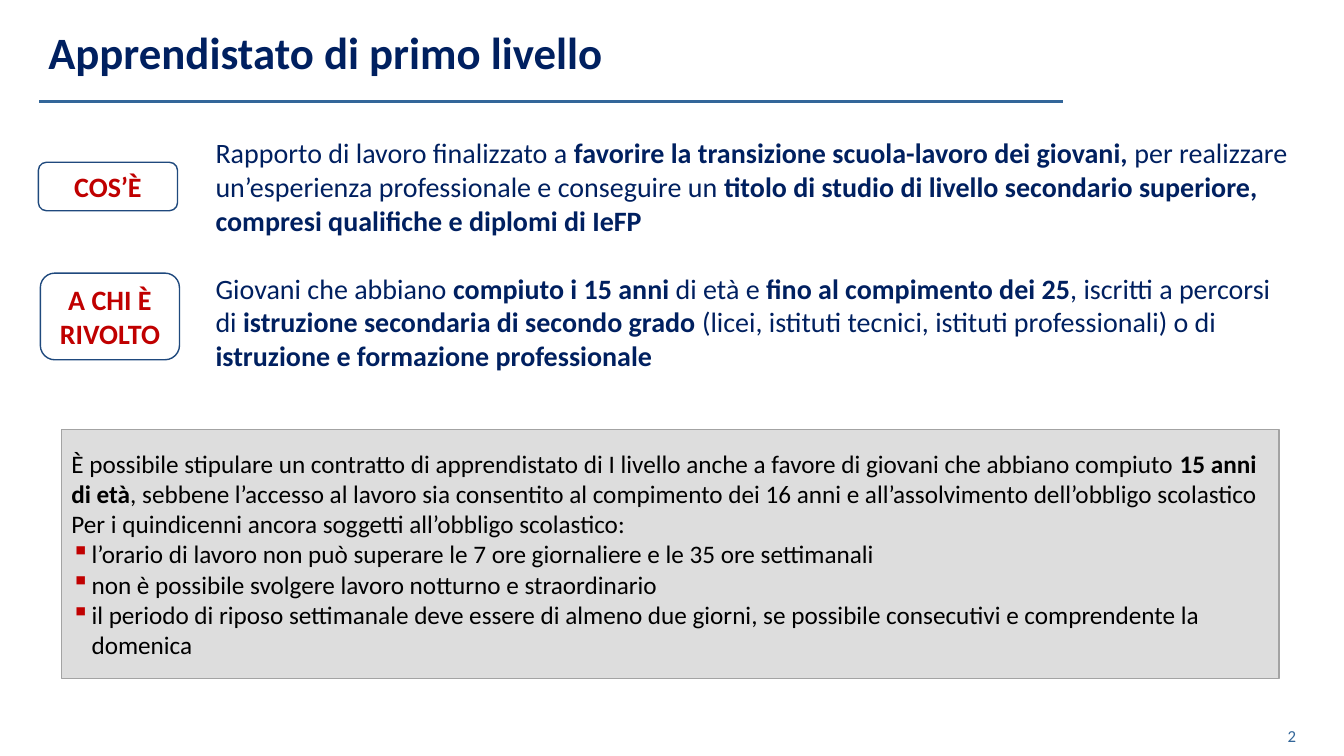
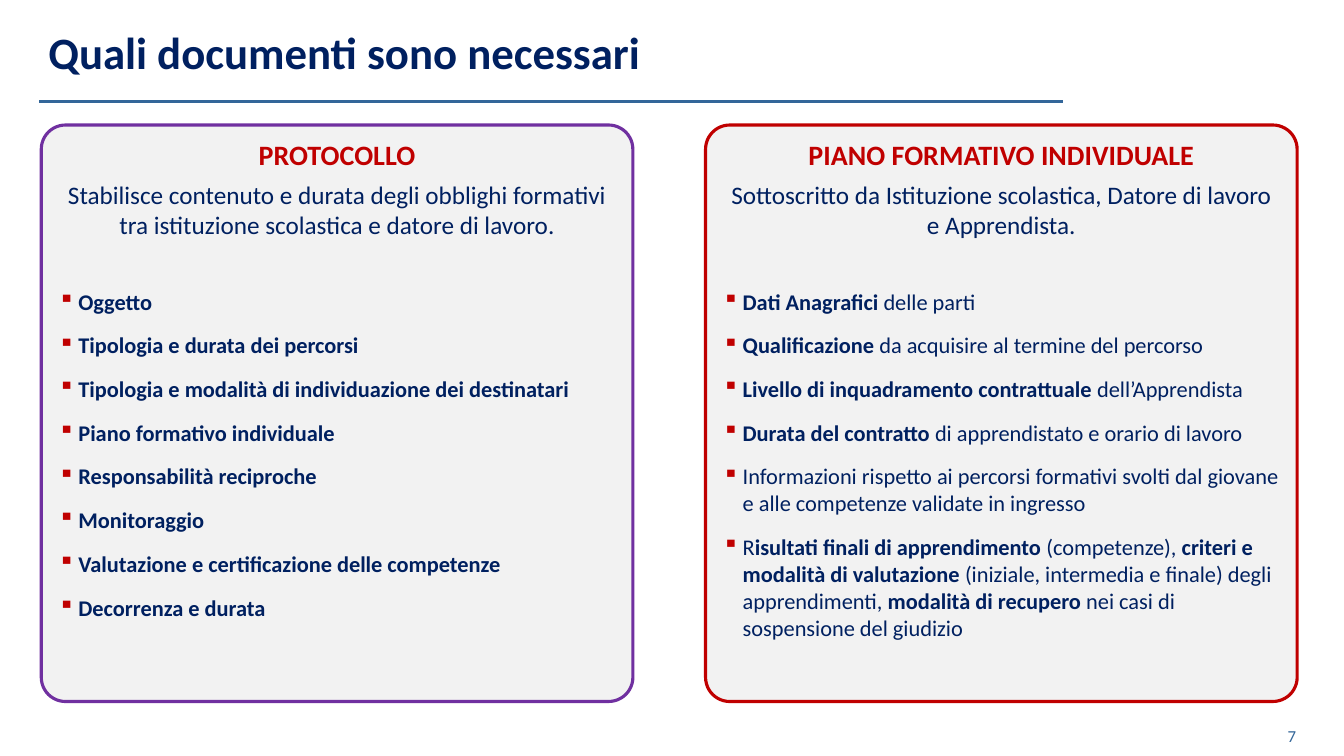
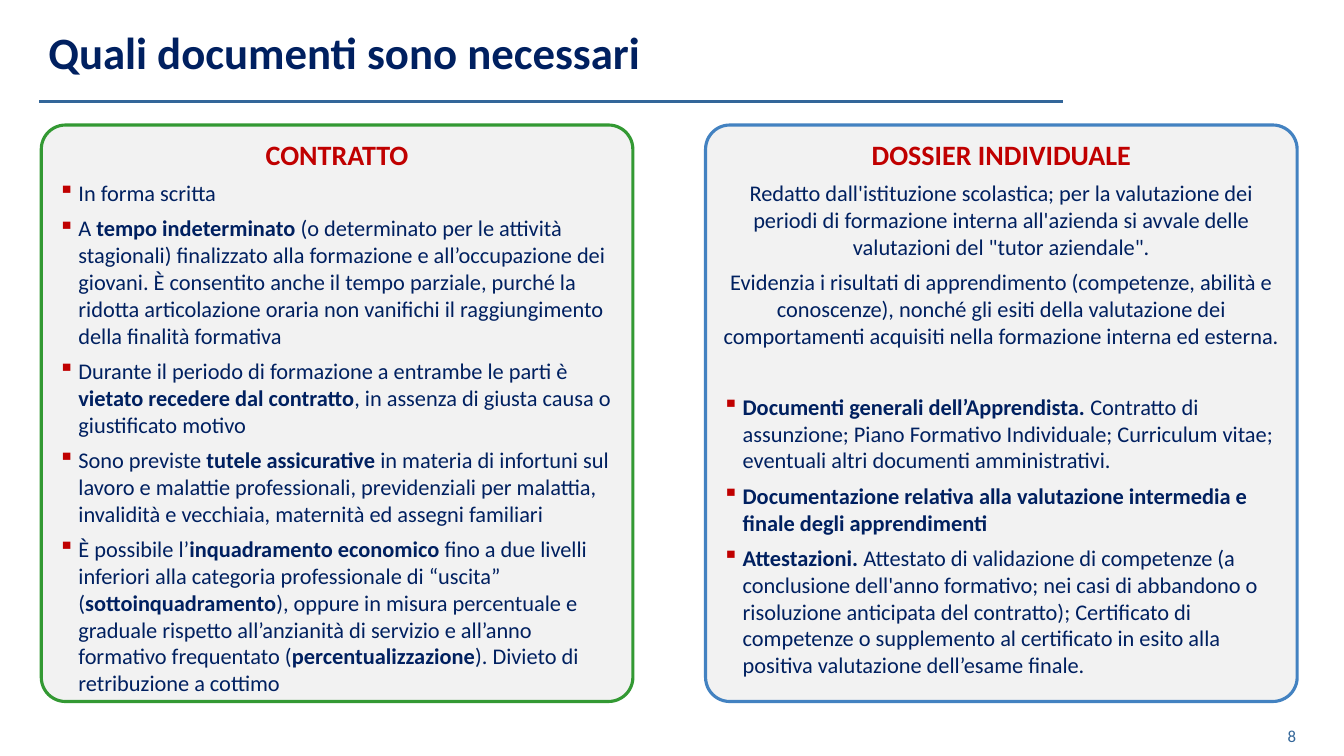
from lxml.etree import SubElement as Sub
from pptx import Presentation
from pptx.dml.color import RGBColor as Rgb
from pptx.enum.shapes import MSO_CONNECTOR as Conn, MSO_SHAPE as Shape
from pptx.enum.text import MSO_ANCHOR as Anchor, PP_ALIGN as Align
from pptx.oxml.ns import qn
from pptx.util import Pt

HUES = {
    "navy": "002060", "red": "C00000", "steel": "336699", "deep": "1F497D",
    "black": "000000", "white": "FFFFFF", "pale": "F2F2F2", "grey": "DDDDDD",
    "edge": "A3A3A3", "purple": "7030A0", "green": "339933", "blue": "4382C1",
}
FONT = "Calibri"
INDENT = 14.4
LEFT, RIGHT = 29.5, 504


def hue(name):
    return Rgb.from_string(HUES[name])


def write(frame, text, size=16, color="navy", bold=False, align=Align.LEFT,
          before=0, after=0, bullet=False):
    """Add a paragraph; ** switches bold on and off."""
    para = frame.paragraphs[0]
    if para.runs:
        para = frame.add_paragraph()
    para.alignment = align
    para.space_before, para.space_after = Pt(before), Pt(after)
    if bullet:
        props = para._p.get_or_add_pPr()
        props.set("marL", str(Pt(INDENT)))
        props.set("indent", str(-Pt(INDENT)))
        Sub(Sub(props, qn("a:buClr")), qn("a:srgbClr")).set("val", HUES["red"])
        Sub(props, qn("a:buChar")).set("char", "▪")
    for i, part in enumerate(text.split("**")):
        if part:
            run = para.add_run()
            run.text = part
            font = run.font
            font.name, font.size = FONT, Pt(size)
            font.bold = bold or i % 2 == 1
            font.color.rgb = hue(color)


class Deck:
    def __init__(self):
        self.prs = Presentation()
        self.prs.slide_width, self.prs.slide_height = Pt(960), Pt(540)

    def start(self, title, number):
        """Open a slide with its title, rule and page number."""
        blank = self.prs.slide_layouts[6]
        self.shapes = self.prs.slides.add_slide(blank).shapes
        self.rule(28, 72.7, 759)
        self.text(717, 511, 216, 29, str(number), anchor=Anchor.MIDDLE,
                  size=12, color="steel", align=Align.RIGHT)
        self.text(27.4, 3.6, 766, 66, title, anchor=Anchor.MIDDLE,
                  size=32, bold=True)

    def rule(self, x, y, end):
        line = self.shapes.add_connector(Conn.STRAIGHT, Pt(x), Pt(y), Pt(end), Pt(y))
        line.line.color.rgb = hue("steel")
        line.line.width = Pt(2.25)
        Sub(line._element.spPr, qn("a:effectLst"))

    def text(self, x, y, w, h, text, anchor=Anchor.TOP, **style):
        frame = self.shapes.add_textbox(Pt(x), Pt(y), Pt(w), Pt(h)).text_frame
        frame.word_wrap, frame.vertical_anchor = True, anchor
        write(frame, text, **style)

    def box(self, x, y, w, h, fill, edge, width=1, kind=Shape.ROUNDED_RECTANGLE,
            anchor=Anchor.MIDDLE, round=None):
        """Draw a filled box and return its text frame."""
        shape = self.shapes.add_shape(kind, Pt(x), Pt(y), Pt(w), Pt(h))
        shape.shadow.inherit = False
        shape.fill.solid()
        shape.fill.fore_color.rgb = hue(fill)
        shape.line.color.rgb = hue(edge)
        shape.line.width = Pt(width)
        if round is not None:
            shape.adjustments[0] = round
        frame = shape.text_frame
        frame.word_wrap, frame.vertical_anchor = True, anchor
        return frame

    def topic(self, x, y, h, label, top, text):
        """Place a label box with its text on the right."""
        frame = self.box(x, y, 99.4, h, "white", "deep")
        write(frame, label, size=20, color="red", bold=True, align=Align.CENTER)
        self.text(146.9, top, 781, 80, text, size=20)

    def panel(self, x, edge, title, intro, items, size=16, space=3, gap=0):
        """Draw a panel: title, centred intro, then bullets after a gap."""
        frame = self.box(x, 89.3, 422.6, 411.8, "pale", edge, width=2.25,
                         anchor=Anchor.TOP, round=0.042)
        write(frame, title, size=20, color="red", bold=True,
              align=Align.CENTER, after=3)
        for text in intro:
            write(frame, text, size=size, align=Align.CENTER, before=3, after=3)
        for i, text in enumerate(items):
            write(frame, text, before=space if i else space + gap,
                  after=space, bullet=True)


def main():
    deck = Deck()

    deck.start("Apprendistato di primo livello", 2)
    deck.topic(27.4, 115.9, 34.6, "COS’È", 93.6,
               "Rapporto di lavoro finalizzato a **favorire la transizione scuola-lavoro "
               "dei giovani, **per realizzare un’esperienza professionale e conseguire un "
               "**titolo di studio di livello secondario superiore, compresi qualifiche e "
               "diplomi di IeFP**")
    deck.topic(28.8, 195.1, 61.9, "A CHI È RIVOLTO", 190.1,
               "Giovani che abbiano **compiuto i 15 anni **di età e **fino al compimento "
               "dei 25**, iscritti a percorsi di **istruzione secondaria di secondo grado** "
               "(licei, istituti tecnici, istituti professionali) o di **istruzione e "
               "formazione professionale**")
    note = deck.box(43.9, 306.7, 869.8, 177.8, "grey", "edge", kind=Shape.RECTANGLE)
    for text in (
        "È possibile stipulare un contratto di apprendistato di I livello anche a favore "
        "di giovani che abbiano compiuto **15 anni di età**, sebbene l’accesso al lavoro "
        "sia consentito al compimento dei 16 anni e all’assolvimento dell’obbligo scolastico",
        "Per i quindicenni ancora soggetti all’obbligo scolastico:",
    ):
        write(note, text, size=18, color="black")
    for text in (
        "l’orario di lavoro non può superare le 7 ore giornaliere e le 35 ore settimanali",
        "non è possibile svolgere lavoro notturno e straordinario",
        "il periodo di riposo settimanale deve essere di almeno due giorni, se possibile "
        "consecutivi e comprendente la domenica",
    ):
        write(note, text, size=18, color="black", bullet=True)

    deck.start("Quali documenti sono necessari", 7)
    deck.panel(LEFT, "purple", "PROTOCOLLO", [
        "Stabilisce contenuto e durata degli obblighi formativi tra istituzione "
        "scolastica e datore di lavoro.",
    ], [
        "**Oggetto**",
        "**Tipologia e durata dei percorsi**",
        "**Tipologia e modalità di individuazione dei destinatari**",
        "**Piano formativo individuale**",
        "**Responsabilità reciproche**",
        "**Monitoraggio**",
        "**Valutazione e certificazione delle competenze**",
        "**Decorrenza e durata**",
    ], size=18, space=6, gap=25.5)
    deck.panel(RIGHT, "red", "PIANO FORMATIVO INDIVIDUALE", [
        "Sottoscritto da Istituzione scolastica, Datore di lavoro e Apprendista.",
    ], [
        "**Dati Anagrafici **delle parti",
        "**Qualificazione **da acquisire al termine del percorso",
        "**Livello di inquadramento contrattuale **dell’Apprendista",
        "**Durata del contratto **di apprendistato e orario di lavoro",
        "Informazioni rispetto ai percorsi formativi svolti dal giovane e alle "
        "competenze validate in ingresso",
        "R**isultati finali di apprendimento **(competenze), **criteri e modalità di "
        "valutazione **(iniziale, intermedia e finale) degli apprendimenti, **modalità "
        "di recupero **nei casi di sospensione del giudizio",
    ], size=18, space=6, gap=25.5)

    deck.start("Quali documenti sono necessari", 8)
    deck.panel(LEFT, "green", "CONTRATTO", [], [
        "In forma scritta",
        "A **tempo indeterminato **(o determinato per le attività stagionali) finalizzato "
        "alla formazione e all’occupazione dei giovani. È consentito anche il tempo "
        "parziale, purché la ridotta articolazione oraria non vanifichi il "
        "raggiungimento della finalità formativa",
        "Durante il periodo di formazione a entrambe le parti è **vietato recedere dal "
        "contratto**, in assenza di giusta causa o giustificato motivo",
        "Sono previste **tutele assicurative **in materia di infortuni sul lavoro e "
        "malattie professionali, previdenziali per malattia, invalidità e vecchiaia, "
        "maternità ed assegni familiari",
        "È possibile l’**inquadramento economico **fino a due livelli inferiori alla "
        "categoria professionale di “uscita” (**sottoinquadramento**), oppure in misura "
        "percentuale e graduale rispetto all’anzianità di servizio e all’anno formativo "
        "frequentato (**percentualizzazione**). Divieto di retribuzione a cottimo",
    ])
    deck.panel(RIGHT, "blue", "DOSSIER INDIVIDUALE", [
        "Redatto dall'istituzione scolastica; per la valutazione dei periodi di "
        "formazione interna all'azienda si avvale delle valutazioni del "
        '"tutor aziendale".',
        "Evidenzia i risultati di apprendimento (competenze, abilità e conoscenze), "
        "nonché gli esiti della valutazione dei comportamenti acquisiti nella "
        "formazione interna ed esterna.",
    ], [
        "**Documenti generali dell’Apprendista. **Contratto di assunzione; Piano "
        "Formativo Individuale; Curriculum vitae; eventuali altri documenti amministrativi.",
        "**Documentazione relativa alla valutazione intermedia e finale degli "
        "apprendimenti**",
        "**Attestazioni. **Attestato di validazione di competenze (a conclusione "
        "dell'anno formativo; nei casi di abbandono o risoluzione anticipata del "
        "contratto); Certificato di competenze o supplemento al certificato in esito "
        "alla positiva valutazione dell’esame finale.",
    ], gap=25.5)

    deck.prs.save("out.pptx")


if __name__ == "__main__":
    main()
